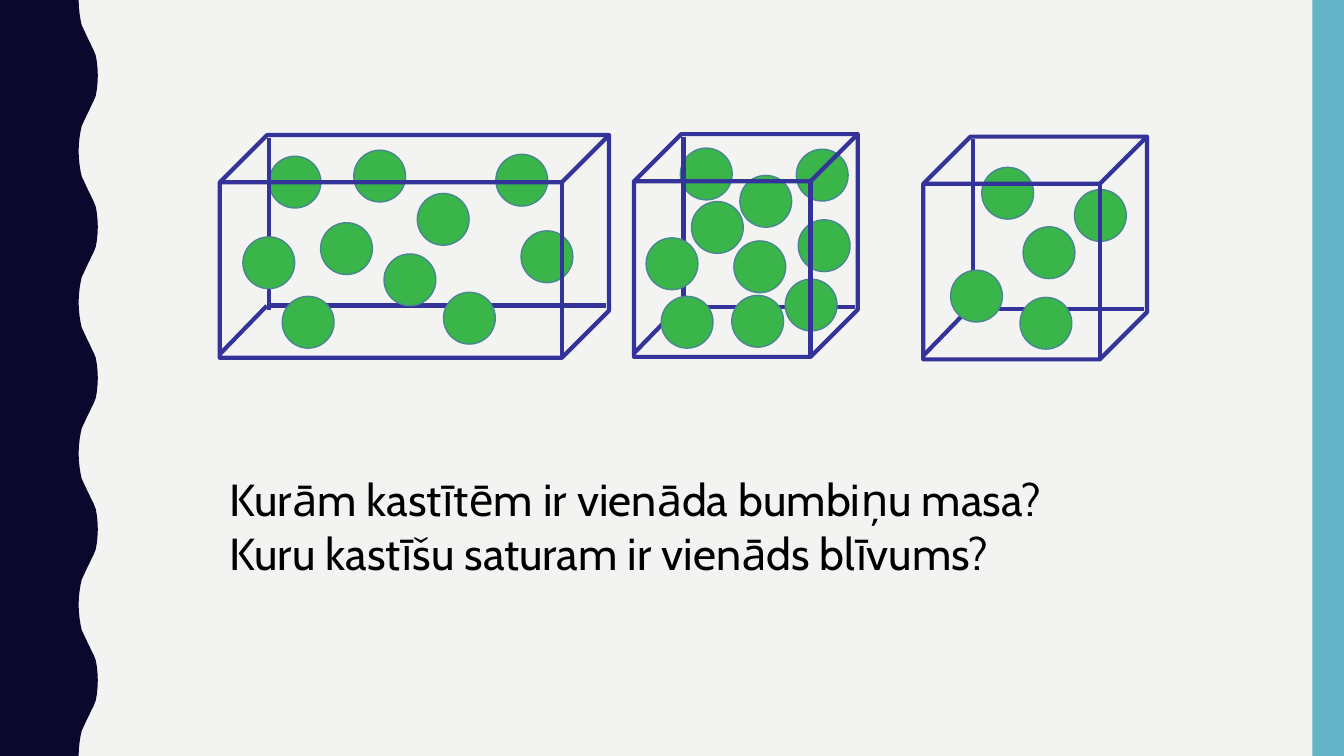
"""Build a slide comparing the density of balls in three boxes."""
from dataclasses import dataclass

from lxml import etree
from pptx import Presentation
from pptx.dml.color import RGBColor
from pptx.enum.shapes import MSO_CONNECTOR, MSO_SHAPE
from pptx.enum.text import MSO_AUTO_SIZE
from pptx.oxml.ns import qn
from pptx.shapes.autoshape import Shape
from pptx.shapes.shapetree import GroupShapes
from pptx.slide import Slide
from pptx.util import Pt

STRAIGHT = MSO_CONNECTOR.STRAIGHT
CUBE, ELLIPSE, RECTANGLE = MSO_SHAPE.CUBE, MSO_SHAPE.OVAL, MSO_SHAPE.RECTANGLE
FIT_SHAPE = MSO_AUTO_SIZE.SHAPE_TO_FIT_TEXT

Point = tuple[float, float]


@dataclass(frozen=True)
class Theme:
    background: RGBColor = RGBColor(0xF3, 0xF3, 0xF2)
    wave: RGBColor = RGBColor(0x0B, 0x08, 0x2E)
    band: RGBColor = RGBColor(0x62, 0xB4, 0xC6)
    edge: RGBColor = RGBColor(0x33, 0x33, 0x99)
    ball: RGBColor = RGBColor(0x39, 0xB5, 0x4A)
    ball_outline: RGBColor = RGBColor(0x49, 0x85, 0x92)
    text: RGBColor = RGBColor(0, 0, 0)
    font: str = "Cabin"
    text_size: float = 32
    edge_width: float = 3
    outline_width: float = 1


@dataclass(frozen=True)
class Box:
    left: float
    top: float
    width: float
    floor: float
    balls_behind: tuple[Point, ...]
    balls_in_front: tuple[Point, ...]


THEME = Theme()
SLIDE_WIDTH, SLIDE_HEIGHT = 960, 540
BAND_LEFT = 937.44
BOX_HEIGHT = 159.1
CUBE_DEPTH = 0.212
BALL_SIZE = 37
WAVE_PERIOD = 108
HALF_WAVE: tuple[Point, ...] = (
    (56.2, 0), (56.4, 5), (56.9, 10), (57.6, 14.4), (58.4, 18),
    (59.8, 21), (61.2, 24), (62.6, 27), (64.1, 30), (65.5, 33),
    (67, 36), (68.4, 39.6), (69.2, 44), (69.7, 49), (69.9, 54),
)
BOXES = (
    Box(157, 96.5, 278, 121.7,
        ((252.7, 107.3), (372.2, 164.9), (354.2, 110.2), (192.2, 111.6)),
        ((229, 159.1), (201.6, 211.7), (274.3, 181.4), (316.8, 208.8),
         (298.1, 138.2), (173.5, 169.2))),
    Box(452.9, 95.8, 159.8, 123.5,
        ((570.2, 157), (568.8, 106.6), (560.9, 199.4), (524.2, 172.1),
         (486, 105.8), (528.5, 125.3)),
        ((522.7, 211), (493.9, 144), (461.5, 169.9), (472.3, 211.7))),
    Box(659.5, 97.6, 159.8, 123.3,
        ((767.5, 135.4), (701.3, 119.5), (730.8, 162)),
        ((728.6, 212.4), (679, 193))),
)
QUESTIONS = (
    "Kurām kastītēm ir vienāda bumbiņu masa?",
    "Kuru kastīšu saturam ir vienāds blīvums?",
)


def fill_plain(shape: Shape, color: RGBColor) -> None:
    """Give a shape a solid fill without outline or shadow."""
    shape.shadow.inherit = False
    shape.fill.solid()
    shape.fill.fore_color.rgb = color
    shape.line.fill.background()


def draw_wave(slide: Slide) -> None:
    """Draw the wavy band on the left."""
    crest_to_trough = [(x, WAVE_PERIOD - y) for x, y in HALF_WAVE[-2::-1]]
    period = [*HALF_WAVE, *crest_to_trough[:-1]]
    outline = [
        (Pt(x), Pt(y + start))
        for start in range(0, SLIDE_HEIGHT, WAVE_PERIOD)
        for x, y in period
    ]
    outline += [(Pt(HALF_WAVE[0][0]), Pt(SLIDE_HEIGHT)), (0, Pt(SLIDE_HEIGHT))]
    builder = slide.shapes.build_freeform(0, 0)
    builder.add_line_segments(outline, close=True)
    fill_plain(builder.convert_to_shape(), THEME.wave)


def draw_band(slide: Slide) -> None:
    """Draw the plain band on the right."""
    band = slide.shapes.add_shape(
        RECTANGLE, Pt(BAND_LEFT), 0,
        Pt(SLIDE_WIDTH - BAND_LEFT), Pt(SLIDE_HEIGHT))
    fill_plain(band, THEME.band)


def draw_edge(shapes: GroupShapes, start: Point, end: Point) -> None:
    """Draw one hidden edge of a box."""
    edge = shapes.add_connector(STRAIGHT, *map(Pt, (*start, *end)))
    edge.line.color.rgb = THEME.edge
    edge.line.width = Pt(THEME.edge_width)
    etree.SubElement(edge._element.spPr, qn("a:effectLst"))


def draw_balls(shapes: GroupShapes, corners: tuple[Point, ...]) -> None:
    """Draw equal balls at the given top left corners."""
    for left, top in corners:
        ball = shapes.add_shape(
            ELLIPSE, Pt(left), Pt(top), Pt(BALL_SIZE), Pt(BALL_SIZE))
        fill_plain(ball, THEME.ball)
        ball.line.color.rgb = THEME.ball_outline
        ball.line.width = Pt(THEME.outline_width)


def draw_cube(shapes: GroupShapes, box: Box) -> None:
    """Draw the visible edges of a box."""
    cube = shapes.add_shape(
        CUBE, Pt(box.left), Pt(box.top), Pt(box.width), Pt(BOX_HEIGHT))
    cube.adjustments[0] = CUBE_DEPTH
    cube.shadow.inherit = False
    cube.fill.background()
    cube.line.color.rgb = THEME.edge
    cube.line.width = Pt(THEME.edge_width)


def draw_box(slide: Slide, box: Box) -> None:
    """Draw a see-through box with its balls as one group."""
    shapes = slide.shapes.add_group_shape().shapes
    left, top, floor = box.left, box.top, box.top + box.floor
    draw_edge(shapes, (left + box.width - 2.2, floor), (left + 34, floor))
    draw_balls(shapes, box.balls_behind)
    draw_cube(shapes, box)
    draw_edge(shapes, (left + 35.3, top + 2), (left + 35.3, top + 124.6))
    draw_edge(shapes, (left + 33.5, top + 122), (left, top + 156.5))
    draw_balls(shapes, box.balls_in_front)


def write_questions(slide: Slide) -> None:
    """Write the questions below the boxes."""
    text_box = slide.shapes.add_textbox(Pt(157), Pt(333.4), Pt(620), Pt(85))
    frame = text_box.text_frame
    frame.word_wrap = True
    frame.auto_size = FIT_SHAPE
    frame.text = "\n".join(QUESTIONS)
    font_format = {"name": THEME.font, "size": Pt(THEME.text_size)}
    for paragraph in frame.paragraphs:
        font = paragraph.runs[0].font
        for attribute, value in font_format.items():
            setattr(font, attribute, value)
        font.color.rgb = THEME.text


def main() -> None:
    """Build and save the presentation."""
    presentation = Presentation()
    presentation.slide_width = Pt(SLIDE_WIDTH)
    presentation.slide_height = Pt(SLIDE_HEIGHT)
    slide = presentation.slides.add_slide(presentation.slide_layouts[6])
    slide.background.fill.solid()
    slide.background.fill.fore_color.rgb = THEME.background
    draw_wave(slide)
    draw_band(slide)
    for box in BOXES:
        draw_box(slide, box)
    write_questions(slide)
    presentation.save("out.pptx")


if __name__ == "__main__":
    main()
